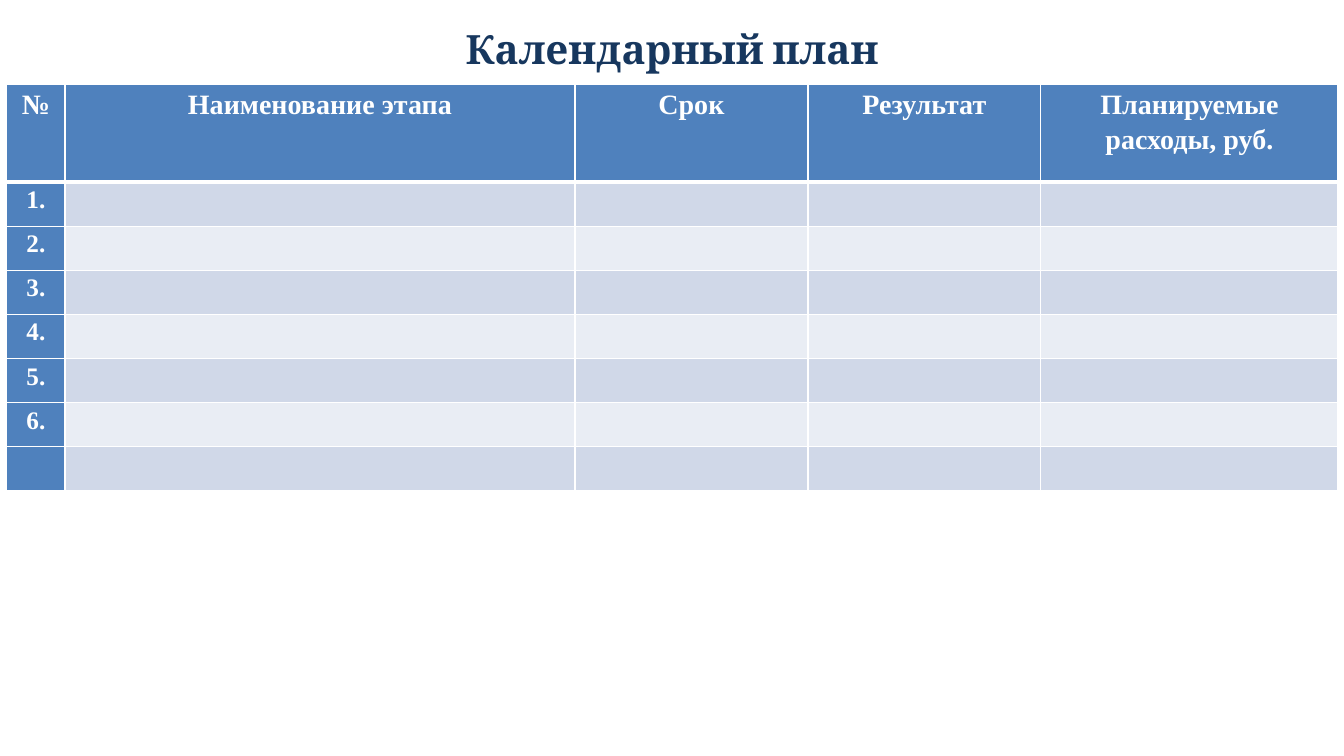
from lxml.etree import SubElement
from pptx import Presentation
from pptx.dml.color import RGBColor
from pptx.enum.text import MSO_ANCHOR, PP_ALIGN
from pptx.oxml.ns import qn
from pptx.util import Cm, Pt

NAVY = RGBColor(0x17, 0x37, 0x5E)
BLUE = RGBColor(0x4F, 0x81, 0xBD)
BAND_DARK = RGBColor(0xD0, 0xD8, 0xE8)
BAND_LIGHT = RGBColor(0xE9, 0xED, 0xF4)
WHITE = RGBColor(0xFF, 0xFF, 0xFF)

HEADINGS = ["№", "Наименование этапа", "Срок", "Результат", "Планируемые расходы, руб."]
COLUMN_WIDTHS = [1.47, 12.85, 5.87, 5.87, 7.49]
STAGE_COUNT = 6
HEADER_HEIGHT, ROW_HEIGHT = 2.46, 1.11


def write_text(frame, text, *, font, size, color, spacing=1.0):
    """Put one bold centred paragraph into a text frame."""
    para = frame.paragraphs[0]
    para.alignment = PP_ALIGN.CENTER
    para.line_spacing = spacing
    span = para.add_run()
    span.text = text
    span.font.name = font
    span.font.size = Pt(size)
    span.font.bold = True
    span.font.color.rgb = color


def set_borders(cell, **widths):
    """Draw white cell borders; widths in points, keyed L, R, T and B."""
    properties = cell._tc.get_or_add_tcPr()
    for side, width in widths.items():
        line = SubElement(properties, qn(f"a:ln{side}"), w=str(Pt(width)))
        fill = SubElement(line, qn("a:solidFill"))
        SubElement(fill, qn("a:srgbClr"), val=str(WHITE))


class PlanSlide:
    title_font = "Cambria"
    table_font = "Times New Roman"

    def __init__(self, deck):
        self.page = deck.slides.add_slide(deck.slide_layouts[6])

    def add_title(self, text):
        box = self.page.shapes.add_textbox(Cm(1.7), Cm(0.53), Cm(30.48), Cm(1.37))
        frame = box.text_frame
        frame.word_wrap = True
        frame.vertical_anchor = MSO_ANCHOR.MIDDLE
        write_text(frame, text, font=self.title_font, size=28.8, color=NAVY)

    def add_plan_table(self, rows):
        heights = [HEADER_HEIGHT] + [ROW_HEIGHT] * (len(rows) - 1)
        table = self.page.shapes.add_table(
            len(rows), len(COLUMN_WIDTHS), Cm(0.17), Cm(2.13),
            Cm(sum(COLUMN_WIDTHS)), Cm(sum(heights))).table
        for column, width in zip(table.columns, COLUMN_WIDTHS):
            column.width = Cm(width)
        for row, height in zip(table.rows, heights):
            row.height = Cm(height)
        for row_index, texts in enumerate(rows):
            for column_index, text in enumerate(texts):
                self.fill_cell(table.cell(row_index, column_index), text, row_index, column_index)

    def fill_cell(self, cell, text, row_index, column_index):
        is_header = row_index == 0
        set_borders(cell, L=1, R=1, T=3 if row_index == 1 else 1, B=3 if is_header else 1)
        cell.margin_left = cell.margin_right = Cm(0.17)
        cell.margin_top = cell.margin_bottom = 0
        cell.fill.solid()
        if is_header or column_index == 0:
            cell.fill.fore_color.rgb = BLUE
        else:
            cell.fill.fore_color.rgb = BAND_DARK if row_index % 2 else BAND_LIGHT
        if text:
            write_text(cell.text_frame, text, font=self.table_font,
                       size=20 if is_header else 18, color=WHITE, spacing=1.15)


def main():
    deck = Presentation()
    deck.slide_width, deck.slide_height = Cm(33.87), Cm(19.05)
    slide = PlanSlide(deck)
    slide.add_title("Календарный план")
    labels = [f"{number}." for number in range(1, STAGE_COUNT + 1)] + [""]
    blanks = [""] * (len(HEADINGS) - 1)
    slide.add_plan_table([HEADINGS] + [[label] + blanks for label in labels])
    deck.save("out.pptx")


if __name__ == "__main__":
    main()
